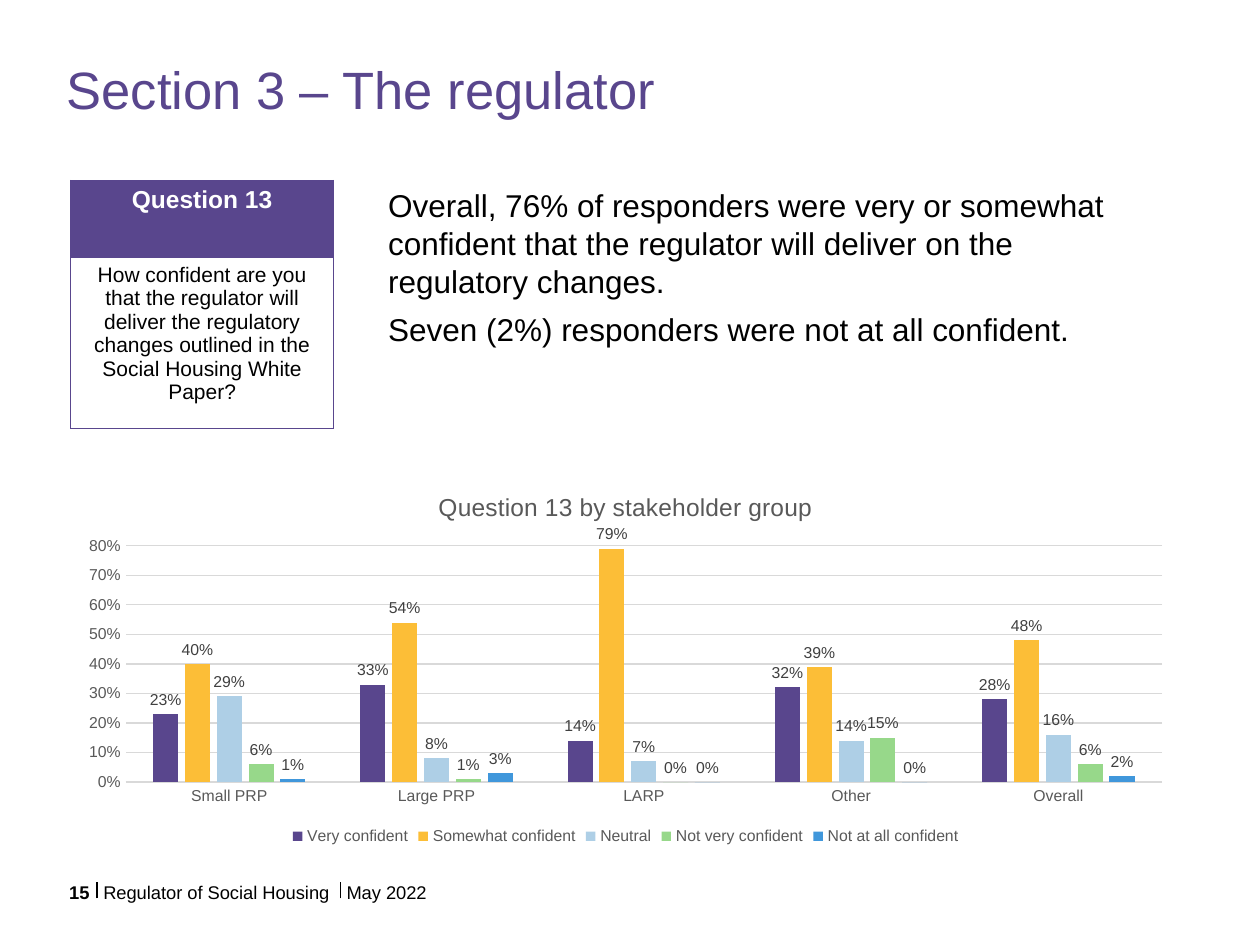
from dataclasses import dataclass

from lxml import etree
from pptx import Presentation
from pptx.chart import data as cd
from pptx.dml.color import RGBColor
from pptx.enum import chart as ec, shapes, text
from pptx.oxml import ns
from pptx.util import Inches, Pt


@dataclass(frozen=True)
class Theme:
    """Colours, font and type sizes of the slide."""
    font: str = "Arial"
    purple: str = "59468D"
    black: str = "000000"
    white: str = "FFFFFF"
    grey: str = "595959"
    label: str = "404040"
    grid: str = "D9D9D9"
    series: tuple = ("59468D", "FCBE37", "AECFE6", "97D88A", "4097DB")
    title: float = 30
    body: float = 18
    heading: float = 14
    question: float = 12
    footer: float = 10.5
    small: float = 9


T = Theme()
GROUPS = ("Small PRP", "Large PRP", "LARP", "Other", "Overall")
ANSWERS = {
    "Very confident": (0.23, 0.33, 0.14, 0.32, 0.28),
    "Somewhat confident": (0.40, 0.54, 0.79, 0.39, 0.48),
    "Neutral": (0.29, 0.08, 0.07, 0.14, 0.16),
    "Not very confident": (0.06, 0.01, 0, 0.15, 0.06),
    "Not at all confident": (0.01, 0.03, 0, 0, 0.02),
}


def rgb(value):
    """Turn a hex string into a colour."""
    return RGBColor.from_string(value)


def style(font, size, color, bold=False):
    """Set the face, size, colour and weight of a font."""
    font.name, font.size, font.bold = T.font, Pt(size), bold
    font.color.rgb = rgb(color)


def place(sp, box):
    """Move a shape to a box of left, top, width and height in inches."""
    sp.left, sp.top, sp.width, sp.height = map(Inches, box)


def plain_frame(sp):
    """Return a wrapping, top-anchored text frame without margins."""
    tf = sp.text_frame
    tf.word_wrap, tf.auto_size = True, text.MSO_AUTO_SIZE.NONE
    tf.vertical_anchor = text.MSO_ANCHOR.TOP
    tf.margin_left = tf.margin_right = tf.margin_top = tf.margin_bottom = 0
    return tf


def add_title(s, box, words):
    """Fill the title placeholder."""
    sp = s.shapes.title
    place(sp, box)
    p = plain_frame(sp).paragraphs[0]
    p.text, p.alignment, p.line_spacing = words, text.PP_ALIGN.LEFT, 0.9
    style(p.font, T.title, T.purple)


def add_findings(s, box, lines):
    """Fill the body placeholder with unbulleted paragraphs."""
    sp = s.placeholders[1]
    place(sp, box)
    tf = sp.text_frame
    tf.text = "\n".join(lines)
    tf.auto_size = text.MSO_AUTO_SIZE.NONE
    for p in tf.paragraphs:
        p.space_before, p.space_after = Pt(0), Pt(6)
        style(p.font, T.body, T.black)
        pPr = p._p.get_or_add_pPr()
        pPr.set("marL", "0")
        pPr.set("indent", "0")
        bullet = etree.Element(ns.qn("a:buNone"))
        pPr.find(ns.qn("a:defRPr")).addprevious(bullet)


def outline_cell(cell, color):
    """Draw a half-point line on all four sides of a cell."""
    tcPr = cell._tc.get_or_add_tcPr()
    for i, side in enumerate(("lnL", "lnR", "lnT", "lnB")):
        ln = etree.Element(ns.qn("a:" + side), w=str(Pt(0.5)))
        fill = etree.SubElement(ln, ns.qn("a:solidFill"))
        etree.SubElement(fill, ns.qn("a:srgbClr"), val=color)
        tcPr.insert(i, ln)


def add_question(s, box, heading, question):
    """Add the table that states the question."""
    table = s.shapes.add_table(2, 1, *map(Inches, box)).table
    head = 0.61
    rows = (
        (heading, head, T.purple, T.heading, T.white, True),
        (question, box[3] - head, T.white, T.question, T.black, False),
    )
    for i, (words, height, fill, size, color, bold) in enumerate(rows):
        table.rows[i].height = Inches(height)
        cell = table.cell(i, 0)
        cell.fill.solid()
        cell.fill.fore_color.rgb = rgb(fill)
        outline_cell(cell, T.purple)
        p = cell.text_frame.paragraphs[0]
        p.text, p.alignment = words, text.PP_ALIGN.CENTER
        style(p.font, size, color, bold)


def style_axis(axis):
    """Give an axis its type and remove its tick marks."""
    axis.major_tick_mark = axis.minor_tick_mark = ec.XL_TICK_MARK.NONE
    style(axis.tick_labels.font, T.small, T.grey)


def style_line(line):
    """Draw a chart line in the grid colour."""
    line.color.rgb, line.width = rgb(T.grid), Pt(0.75)


def add_answers(s, box, title):
    """Add the column chart of answers by stakeholder group."""
    data = cd.CategoryChartData(number_format="0%")
    data.categories = GROUPS
    for name, values in ANSWERS.items():
        data.add_series(name, values)
    chart = s.shapes.add_chart(
        ec.XL_CHART_TYPE.COLUMN_CLUSTERED, *map(Inches, box), data).chart
    style(chart.font, T.small, T.grey)
    p = chart.chart_title.text_frame.paragraphs[0]
    p.text = title
    style(p.font, T.heading, T.grey)
    chart.has_legend = True
    chart.legend.position = ec.XL_LEGEND_POSITION.BOTTOM
    chart.legend.include_in_layout = False
    style(chart.legend.font, T.small, T.grey)

    style_axis(chart.category_axis)
    style_line(chart.category_axis.format.line)
    axis = chart.value_axis
    style_axis(axis)
    axis.minimum_scale, axis.maximum_scale, axis.major_unit = 0, 0.8, 0.1
    axis.format.line.fill.background()
    style_line(axis.major_gridlines.format.line)

    plot = chart.plots[0]
    plot.gap_width, plot.overlap, plot.vary_by_categories = 219, -27, False
    for series, color in zip(plot.series, T.series):
        series.format.fill.solid()
        series.format.fill.fore_color.rgb = rgb(color)
        labels = series.data_labels
        labels.show_value = True
        labels.number_format, labels.number_format_is_linked = "0%", False
        labels.position = ec.XL_LABEL_POSITION.OUTSIDE_END
        style(labels.font, T.small, T.label)


def add_footer(s, box, parts):
    """Add footer texts at offsets from the box, with a divider before each but the first."""
    left, top, _, height = box
    for i, (words, offset, width) in enumerate(parts):
        x = left + offset
        sp = s.shapes.add_textbox(*map(Inches, (x, top, width, height)))
        p = plain_frame(sp).paragraphs[0]
        p.text = words
        p.alignment = text.PP_ALIGN.LEFT if i else text.PP_ALIGN.CENTER
        style(p.font, T.footer, T.black, bold=i == 0)
        if i:
            line = s.shapes.add_connector(
                shapes.MSO_CONNECTOR.STRAIGHT,
                *map(Inches, (x - 0.05, top + 0.14, x - 0.05, top + 0.01)))
            line.line.color.rgb, line.line.width = rgb(T.black), Pt(0.75)
            etree.SubElement(line._element.spPr, ns.qn("a:effectLst"))


def main():
    """Build the slide and save it."""
    prs = Presentation()
    prs.slide_width, prs.slide_height = Inches(10), Inches(7.5)
    s = prs.slides.add_slide(prs.slide_layouts[1])
    add_title(s, (0.53, 0.51, 8.87, 0.79), "Section 3 – The regulator")
    add_question(s, (0.56, 1.43, 2.09, 1.97), "Question 13",
                 "How confident are you that the regulator will deliver the regulatory "
                 "changes outlined in the Social Housing White Paper?")
    add_findings(s, (2.98, 1.43, 6.13, 1.4), (
        "Overall, 76% of responders were very or somewhat confident that the "
        "regulator will deliver on the regulatory changes.",
        "Seven (2%) responders were not at all confident."))
    add_answers(s, (0.53, 3.75, 8.87, 3), "Question 13 by stakeholder group")
    add_footer(s, (0.53, 6.99, 4.57, 0.12), (
        ("15", 0, 0.2),
        ("Regulator of Social Housing", 0.29, 1.83),
        ("May 2022", 2.22, 2.35)))
    prs.save("out.pptx")


if __name__ == "__main__":
    main()
